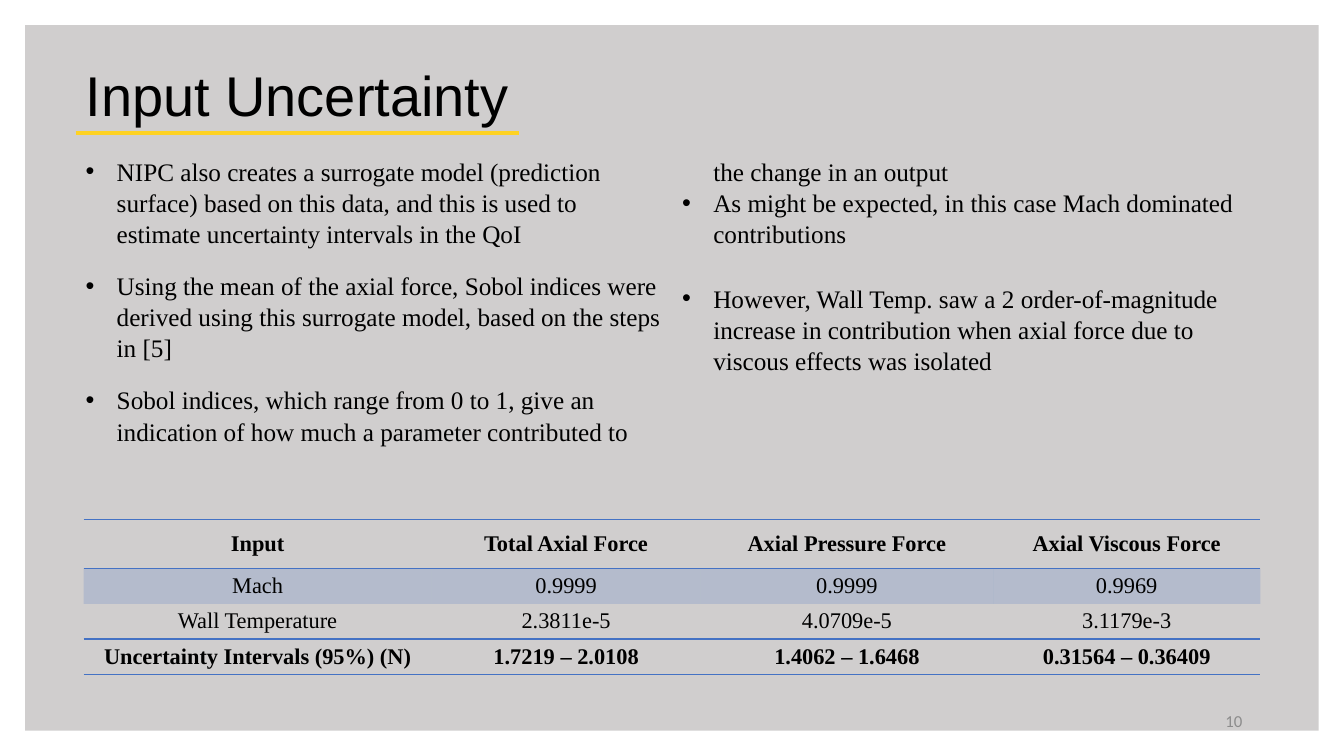
from lxml import etree
from pptx import Presentation
from pptx.dml.color import RGBColor
from pptx.enum.shapes import MSO_CONNECTOR, MSO_SHAPE
from pptx.enum.text import MSO_ANCHOR as ANCHOR, PP_ALIGN as ALIGN
from pptx.oxml.ns import qn
from pptx.util import Pt

EMU_PER_PX = 9144  # 100 px to the inch
COLORS = {"panel": "D0CECE", "text": "000000", "rule": "FED223",
          "accent": "4472C4", "number": "8C8C8C"}
SERIF = "Times New Roman"

# Text and the gap below it in points
BULLETS = [
    ("NIPC also creates a surrogate model (prediction surface) based on this data, "
     "and this is used to estimate uncertainty intervals in the QoI", 15),
    ("Using the mean of the axial force, Sobol indices were derived using this "
     "surrogate model, based on the steps in [5]", 15),
    ("Sobol indices, which range from 0 to 1, give an indication of how much a "
     "parameter contributed to the change in an output", 0),
    ("As might be expected, in this case Mach dominated contributions", 24),
    ("However, Wall Temp. saw a 2 order-of-magnitude increase in contribution when "
     "axial force due to viscous effects was isolated", 0),
]
SOBOL_ROWS = [
    ("Input", "Total Axial Force", "Axial Pressure Force", "Axial Viscous Force"),
    ("Mach", "0.9999", "0.9999", "0.9969"),
    ("Wall Temperature", "2.3811e-5", "4.0709e-5", "3.1179e-3"),
    ("Uncertainty Intervals (95%) (N)", "1.7219 – 2.0108", "1.4062 – 1.6468",
     "0.31564 – 0.36409"),
]
COL_WIDTHS = [345, 267, 290, 265]
ROW_HEIGHTS = [49, 35, 35, 35]
BOLD_ROWS = {0, 3}
SHADED_ROW = 1
RULED_EDGES = {0, 1, 3, 4}


def px(*lengths):
    return [n * EMU_PER_PX for n in lengths]


def rgb(name):
    return RGBColor.from_string(COLORS[name])


def add_run(p, text, size, font=SERIF, color="text", bold=False):
    r = p.add_run()
    r.text = text
    r.font.size, r.font.name, r.font.bold = Pt(size), font, bold
    r.font.color.rgb = rgb(color)


def add_text_frame(s, box, anchor=ANCHOR.MIDDLE):
    tf = s.shapes.add_textbox(*px(*box)).text_frame
    tf.word_wrap = True
    tf.vertical_anchor = anchor
    return tf


def add_panel(s, box):
    sp = s.shapes.add_shape(MSO_SHAPE.RECTANGLE, *px(*box))
    sp.shadow.inherit = False
    sp.fill.solid()
    sp.fill.fore_color.rgb = rgb("panel")
    sp.line.fill.background()


def add_title(s, text):
    p = add_text_frame(s, (75, 25, 1183, 145)).paragraphs[0]
    p.line_spacing = 0.9
    add_run(p, text, 40, "Arial")
    rule = s.shapes.add_connector(MSO_CONNECTOR.STRAIGHT, *px(75, 132, 515, 132))
    rule.line.color.rgb = rgb("rule")
    rule.line.width = Pt(3.25)
    etree.SubElement(rule._element.spPr, qn("a:effectLst"))


def add_bullets(s, box, bullets):
    """Flow the bullets through two columns of one text box."""
    tf = add_text_frame(s, box, ANCHOR.TOP)
    body = tf._txBody.bodyPr
    body.set("numCol", "2")
    body.set("spcCol", str(px(20)[0]))
    indent = px(31)[0]
    for i, (text, gap) in enumerate(bullets):
        p = tf.add_paragraph() if i else tf.paragraphs[0]
        p.line_spacing = 1.03
        p.space_after = Pt(gap)
        pPr = p._p.get_or_add_pPr()
        pPr.set("marL", str(indent))
        pPr.set("indent", str(-indent))
        etree.SubElement(pPr, qn("a:buFont")).set("typeface", "Arial")
        etree.SubElement(pPr, qn("a:buChar")).set("char", "•")
        add_run(p, text, 18)


def set_borders(cell, ruled):
    """Rule the named sides in the accent colour and clear the others."""
    tcPr = cell._tc.get_or_add_tcPr()
    for i, side in enumerate(("lnL", "lnR", "lnT", "lnB")):
        ln = etree.Element(qn(f"a:{side}"), w=str(Pt(1)))
        if side in ruled:
            fill = etree.SubElement(ln, qn("a:solidFill"))
            etree.SubElement(fill, qn("a:srgbClr")).set("val", COLORS["accent"])
        else:
            etree.SubElement(ln, qn("a:noFill"))
        tcPr.insert(i, ln)


def shade(cell, percent):
    cell.fill.solid()
    cell.fill.fore_color.rgb = rgb("accent")
    clr = cell._tc.tcPr.find(f"{qn('a:solidFill')}/{qn('a:srgbClr')}")
    etree.SubElement(clr, qn("a:alpha")).set("val", str(percent * 1000))


def fill_cell(cell, text, row):
    cell.vertical_anchor = ANCHOR.MIDDLE
    cell.margin_top = cell.margin_bottom = px(4)[0]
    p = cell.text_frame.paragraphs[0]
    p.alignment = ALIGN.CENTER
    add_run(p, text, 16, bold=row in BOLD_ROWS)
    if row == SHADED_ROW:
        shade(cell, 20)
    else:
        cell.fill.background()
    edges = (("lnT", row), ("lnB", row + 1))
    set_borders(cell, {side for side, edge in edges if edge in RULED_EDGES})


def add_sobol_table(s, left, top):
    box = px(left, top, sum(COL_WIDTHS), sum(ROW_HEIGHTS))
    table = s.shapes.add_table(len(SOBOL_ROWS), len(COL_WIDTHS), *box).table
    table.first_row = table.horz_banding = False
    for col, width in zip(table.columns, px(*COL_WIDTHS)):
        col.width = width
    for row, height in zip(table.rows, px(*ROW_HEIGHTS)):
        row.height = height
    for i, texts in enumerate(SOBOL_ROWS):
        for j, text in enumerate(texts):
            fill_cell(table.cell(i, j), text, i)


def add_slide_number(s, number):
    p = add_text_frame(s, (942, 695, 300, 40)).paragraphs[0]
    p.alignment = ALIGN.RIGHT
    add_run(p, number, 12, "Calibri", "number")


def main():
    prs = Presentation()
    prs.slide_width, prs.slide_height = px(1333, 750)
    s = prs.slides.add_slide(prs.slide_layouts[6])
    add_panel(s, (25, 25, 1283, 700))
    add_title(s, "Input Uncertainty")
    add_bullets(s, (75, 149, 1183, 329), BULLETS)
    add_sobol_table(s, 83, 515)
    add_slide_number(s, "10")
    prs.save("out.pptx")


if __name__ == "__main__":
    main()
